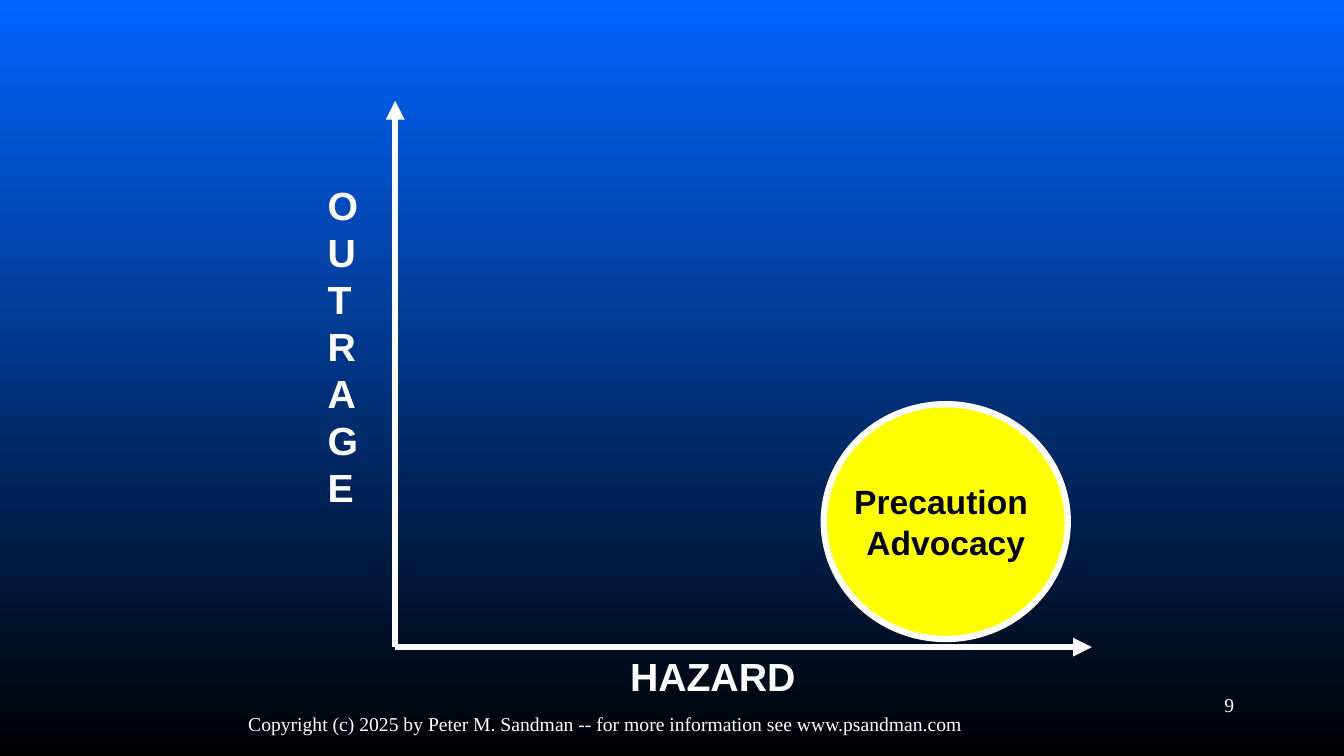
from pptx import Presentation
from pptx.dml.color import RGBColor
from pptx.enum.shapes import MSO_CONNECTOR as Connector, MSO_SHAPE as Shape
from pptx.enum.text import MSO_ANCHOR as Anchor, PP_ALIGN as Align
from pptx.oxml.ns import qn
from pptx.util import Inches, Pt
from lxml.etree import SubElement

COLORS = {"top": "0066FF", "bottom": "000000", "white": "FFFFFF",
          "circle": "FFFF00", "black": "000000"}
LINE_WIDTH = Pt(4.5)


def color(name):
    return RGBColor.from_string(COLORS[name])


def write(frame, lines, size, font, tint="white", bold=False, align=Align.LEFT, wrap=True):
    frame.word_wrap = wrap
    for index, line in enumerate(lines):
        para = frame.paragraphs[0] if index == 0 else frame.add_paragraph()
        para.alignment = align
        span = para.add_run()
        span.text = line
        span.font.size = Pt(size)
        span.font.name = font
        span.font.bold = bold
        span.font.color.rgb = color(tint)


def add_label(page, box, text, size, font, **style):
    label = page.shapes.add_textbox(*map(Inches, box))
    write(label.text_frame, [text], size, font, **style)


def add_arrow(page, start, end):
    arrow = page.shapes.add_connector(
        Connector.STRAIGHT, *map(Inches, (*start, *end)))
    arrow.line.color.rgb = color("white")
    arrow.line.width = LINE_WIDTH
    SubElement(arrow.line._get_or_add_ln(), qn("a:tailEnd"), type="triangle")
    SubElement(arrow._element.spPr, qn("a:effectLst"))


def paint_background(page):
    fill = page.background.fill
    fill.gradient()
    fill.gradient_angle = 270
    for stop, name, position in zip(fill.gradient_stops, ("top", "bottom"), (0, 1)):
        stop.color.rgb = color(name)
        stop.position = position


def add_axes(page, box):
    left, top, width, height = box
    origin = (left, top + height)
    add_arrow(page, origin, (left, top))
    add_arrow(page, origin, (left + width, top + height))
    add_label(page, (left + 2.23, top + height, 1.85, 0.57), "HAZARD",
              28, "Arial", bold=True, wrap=False)
    add_label(page, (left - 0.77, top + 0.75, 0.52, 3.37), "OUTRAGE",
              28, "Arial", bold=True)


def add_circle(page, box):
    circle = page.shapes.add_shape(Shape.OVAL, *map(Inches, box))
    circle.shadow.inherit = False
    circle.fill.solid()
    circle.fill.fore_color.rgb = color("circle")
    circle.line.color.rgb = color("white")
    circle.line.width = LINE_WIDTH
    circle.text_frame.vertical_anchor = Anchor.MIDDLE
    write(circle.text_frame, ["Precaution ", "Advocacy"], 24, "Arial",
          tint="black", bold=True, align=Align.CENTER, wrap=False)


def add_footer(page, box):
    left, top, width, height = box
    add_label(page, (left + width - 2.78, top, 2.78, height), "9",
              14, "Times New Roman", align=Align.RIGHT)
    add_label(page, (left, top + 0.18, 8.67, height),
              "Copyright (c) 2025 by Peter M. Sandman -- for more information see www.psandman.com",
              14, "Times New Roman", align=Align.CENTER)


def main():
    deck = Presentation()
    deck.slide_width = Inches(13.33)
    deck.slide_height = Inches(7.5)
    page = deck.slides.add_slide(deck.slide_layouts[6])
    paint_background(page)
    add_axes(page, (3.92, 1, 6.91, 5.42))
    add_circle(page, (8.17, 4.01, 2.42, 2.33))
    add_footer(page, (1.67, 6.83, 10.67, 0.5))
    deck.save("out.pptx")


if __name__ == "__main__":
    main()
